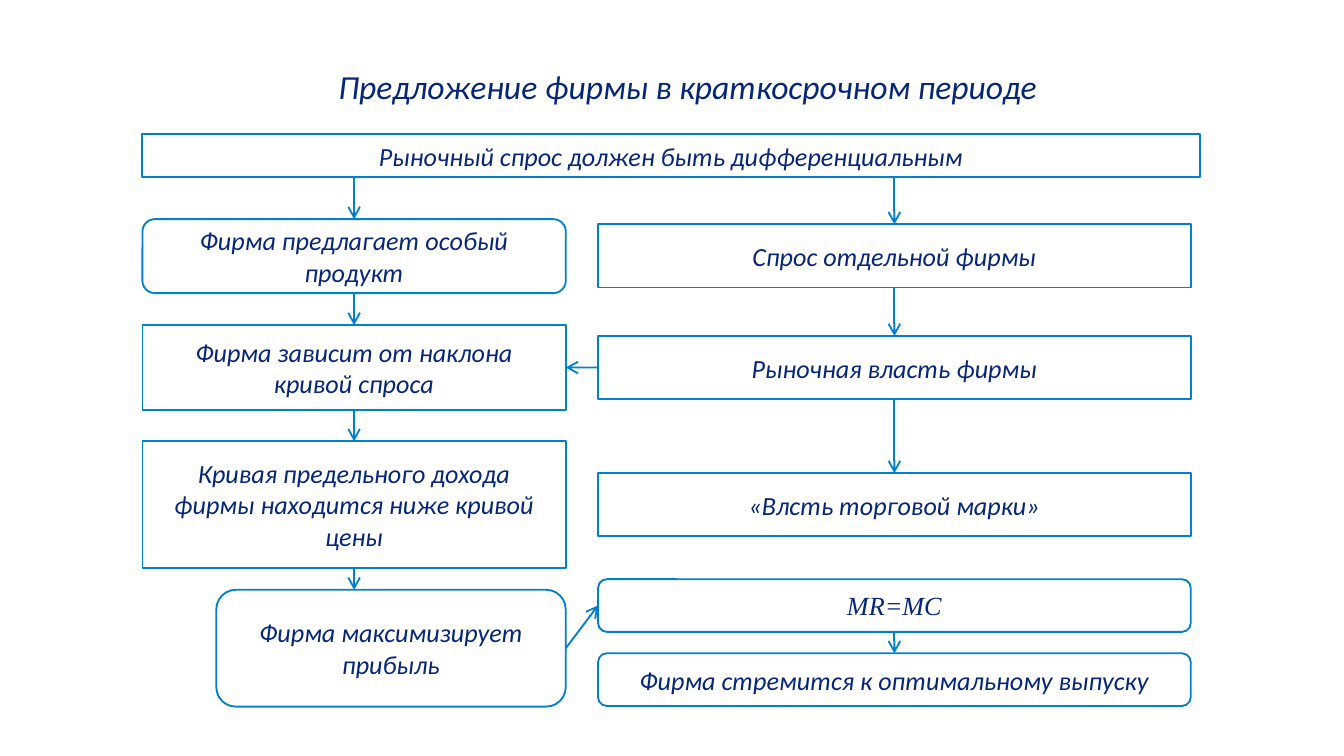
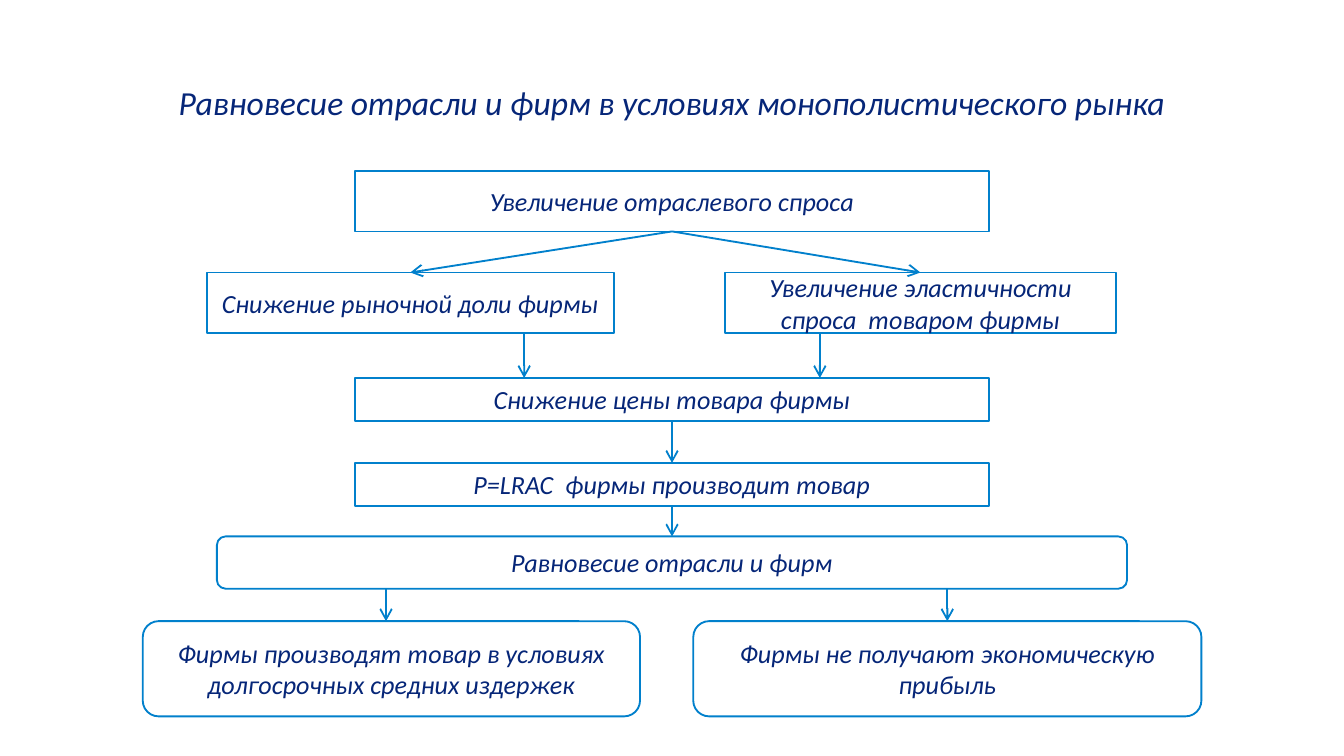
"""Build two flowchart slides on the firm under monopolistic competition."""
import pptx
import pptx.util
import pptx.dml.color
import pptx.enum.shapes
import pptx.enum.text
import pptx.oxml.ns
import lxml.etree

Pt = pptx.util.Pt
COLORS = {name: pptx.dml.color.RGBColor.from_string(value) for name, value in {
    "text": "062678", "line": "0180CC", "paper": "FFFFFF"}.items()}
RECT = pptx.enum.shapes.MSO_SHAPE.RECTANGLE
ROUND = pptx.enum.shapes.MSO_SHAPE.ROUNDED_RECTANGLE
TOP, LEFT, BOTTOM, RIGHT = range(4)
TITLE_SIZE, BOX_SIZE = 18, 14


def write(frame, text, size, font="Calibri", wrap=True):
    frame.word_wrap = wrap
    frame.auto_size = pptx.enum.text.MSO_AUTO_SIZE.NONE
    frame.vertical_anchor = pptx.enum.text.MSO_ANCHOR.MIDDLE
    paragraph = frame.paragraphs[0]
    paragraph.alignment = pptx.enum.text.PP_ALIGN.CENTER
    run = paragraph.add_run()
    run.text = text
    run.font.name = font
    run.font.size = Pt(size)
    run.font.italic = True
    run.font.color.rgb = COLORS["text"]


def outline(line):
    line.color.rgb = COLORS["line"]
    line.width = Pt(1)


deck = pptx.Presentation()
deck.slide_width, deck.slide_height = Pt(720), Pt(405)

supply = {
    "title": ("Предложение фирмы в краткосрочном периоде", 172, 31.7, 393, 28.8, False),
    "boxes": {
        "demand": ("Рыночный спрос должен быть дифференциальным", RECT, 76.3, 72, 566.6, 23),
        "product": ("Фирма предлагает особый продукт", ROUND, 76.3, 117.4, 226.8, 39.6),
        "slope": ("Фирма зависит от наклона кривой спроса", RECT, 76.3, 174.2, 226.8, 45.4),
        "revenue": ("Кривая предельного дохода фирмы находится ниже кривой цены",
                    RECT, 76.3, 236.4, 226.8, 67.8),
        "profit": ("Фирма максимизирует прибыль", ROUND, 115.9, 316, 187.2, 62.6),
        "firm demand": ("Спрос отдельной фирмы", RECT, 320.4, 120.2, 317.5, 33.9),
        "power": ("Рыночная власть фирмы", RECT, 320.4, 180, 317.5, 33.9),
        "brand": ("«Влсть торговой марки»", RECT, 320.4, 253.5, 317.5, 33.9),
        "MR=MC": ("MR=MC", ROUND, 320.4, 310.3, 317.5, 28.2),
        "output": ("Фирма стремится к оптимальному выпуску", ROUND, 320.4, 350, 317.5, 28.2),
    },
    "arrows": [
        ((189.7, 95), ("product", TOP)),
        (("product", BOTTOM), ("slope", TOP)),
        (("slope", BOTTOM), ("revenue", TOP)),
        (("revenue", BOTTOM), (189.7, 316)),
        (("profit", RIGHT), ("MR=MC", LEFT)),
        ((479.15, 95), ("firm demand", TOP)),
        (("firm demand", BOTTOM), ("power", TOP)),
        (("power", BOTTOM), ("brand", TOP)),
        (("MR=MC", BOTTOM), ("output", TOP)),
        (("power", LEFT), ("slope", RIGHT)),
    ],
}

balance = {
    "title": ("Равновесие отрасли и фирм в условиях монополистического рынка",
              36, 21, 648, 67.5, True),
    "boxes": {
        "demand": ("Увеличение отраслевого спроса", RECT, 190, 91.5, 340, 32.5),
        "share": ("Снижение рыночной доли фирмы", RECT, 110.7, 146, 218.2, 32.5),
        "elasticity": ("Увеличение эластичности спроса  товаром фирмы",
                       RECT, 388.2, 146, 209.8, 32.5),
        "price": ("Снижение цены товара фирмы", RECT, 190, 202.5, 340, 23),
        "P=LRAC": ("P=LRAC  фирмы производит товар", RECT, 190, 248, 340, 23),
        "equilibrium": ("Равновесие отрасли и фирм", ROUND, 116.2, 287.4, 487.6, 28),
        "costs": ("Фирмы производят товар в условиях долгосрочных средних издержек",
                  ROUND, 76.5, 332.8, 266.4, 51),
        "no profit": ("Фирмы не получают экономическую прибыль",
                      ROUND, 371.4, 332.8, 272.2, 51),
    },
    "arrows": [
        (("demand", BOTTOM), ("share", TOP)),
        (("demand", BOTTOM), ("elasticity", TOP)),
        ((280.8, 178.5), (280.8, 202.5)),
        ((439.2, 178.5), (439.2, 202.5)),
        (("price", BOTTOM), ("P=LRAC", TOP)),
        (("P=LRAC", BOTTOM), ("equilibrium", TOP)),
        ((206.8, 315.4), (206.8, 332.8)),
        ((507.5, 315.4), ("no profit", TOP)),
    ],
}

for flow in (supply, balance):
    slide = deck.slides.add_slide(deck.slide_layouts[5])
    slide.background.fill.solid()
    slide.background.fill.fore_color.rgb = COLORS["paper"]

    heading, *place, wrap = flow["title"]
    title = slide.shapes.title
    title.left, title.top, title.width, title.height = map(Pt, place)
    write(title.text_frame, heading, TITLE_SIZE, wrap=wrap)

    steps = {}
    for key, (text, outline_kind, *place) in flow["boxes"].items():
        step = slide.shapes.add_shape(outline_kind, *map(Pt, place))
        step.shadow.inherit = False
        step.fill.solid()
        step.fill.fore_color.rgb = COLORS["paper"]
        outline(step.line)
        write(step.text_frame, text, BOX_SIZE,
              "Times New Roman" if key == "MR=MC" else "Calibri")
        steps[key] = step

    for start, end in flow["arrows"]:
        corners = [Pt(v) for point in (start, end)
                   for v in ((0, 0) if point[0] in steps else point)]
        arrow = slide.shapes.add_connector(
            pptx.enum.shapes.MSO_CONNECTOR.STRAIGHT, *corners)
        if start[0] in steps:
            arrow.begin_connect(steps[start[0]], start[1])
        if end[0] in steps:
            arrow.end_connect(steps[end[0]], end[1])
        outline(arrow.line)
        properties = arrow.line._get_or_add_ln()
        lxml.etree.SubElement(properties, pptx.oxml.ns.qn("a:tailEnd"), type="arrow")
        lxml.etree.SubElement(properties.getparent(), pptx.oxml.ns.qn("a:effectLst"))

deck.save("out.pptx")
